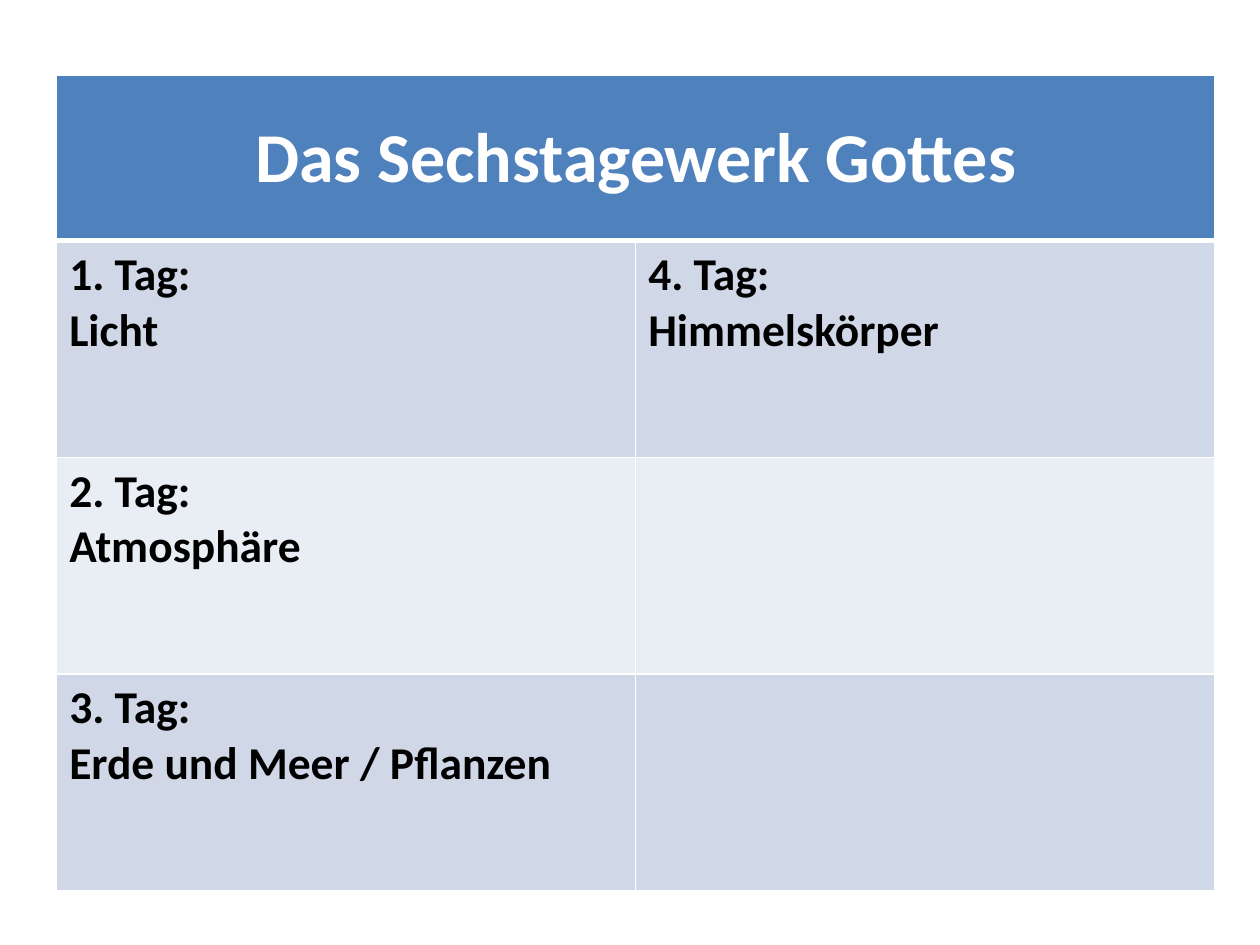
from pptx import Presentation
from pptx.dml.color import RGBColor
from pptx.enum.text import MSO_ANCHOR as Anchor, PP_ALIGN as Align
from pptx.oxml import parse_xml
from pptx.oxml.ns import nsdecls
from pptx.util import Inches, Pt


def color(value):
    return RGBColor.from_string(value)


def add_border(cell, side, width):
    cell._tc.get_or_add_tcPr().append(parse_xml(
        f'<a:{side} {nsdecls("a")} w="{Pt(width)}"><a:solidFill>'
        f'<a:srgbClr val="FFFFFF"/></a:solidFill></a:{side}>'))


presentation = Presentation()
presentation.slide_width = Inches(10)
presentation.slide_height = Inches(7.5)
slide = presentation.slides.add_slide(presentation.slide_layouts[6])

rows = [
    ["Das Sechstagewerk Gottes", ""],
    ["1. Tag: \vLicht", "4. Tag: \vHimmelskörper"],
    ["2. Tag: \vAtmosphäre", ""],
    ["3. Tag: \vErde und Meer / Pflanzen", ""],
]
row_fills = ["4F81BD", "D0D8E8", "E9EDF4", "D0D8E8"]
header_format = {"name": "Calibri", "size": Pt(40), "bold": True}
body_format = {"name": "Calibri", "size": Pt(26), "bold": True}

table = slide.shapes.add_table(
    len(rows), 2, Inches(0.45), Inches(0.6), Inches(9.19), Inches(6.46)).table
for column in table.columns:
    column.width = Inches(9.19 / 2)
for index, row in enumerate(table.rows):
    row.height = Inches(1.72 if index else 1.31)

for row_index, texts in enumerate(rows):
    is_header = row_index == 0
    for column_index, text in enumerate(texts):
        cell = table.cell(row_index, column_index)
        for side in ("lnL", "lnR", "lnT", "lnB"):
            thick = (row_index, side) in [(0, "lnB"), (1, "lnT")]
            add_border(cell, side, 3 if thick else 1)
        cell.fill.solid()
        cell.fill.fore_color.rgb = color(row_fills[row_index])
        if not text:
            continue
        cell.vertical_anchor = Anchor.MIDDLE if is_header else Anchor.TOP
        paragraph = cell.text_frame.paragraphs[0]
        paragraph.text = text
        paragraph.alignment = Align.CENTER if is_header else Align.LEFT
        for run in paragraph.runs:
            for name, value in (header_format if is_header else body_format).items():
                setattr(run.font, name, value)
            run.font.color.rgb = color("FFFFFF" if is_header else "000000")

table.cell(0, 0).merge(table.cell(0, 1))
presentation.save("out.pptx")
